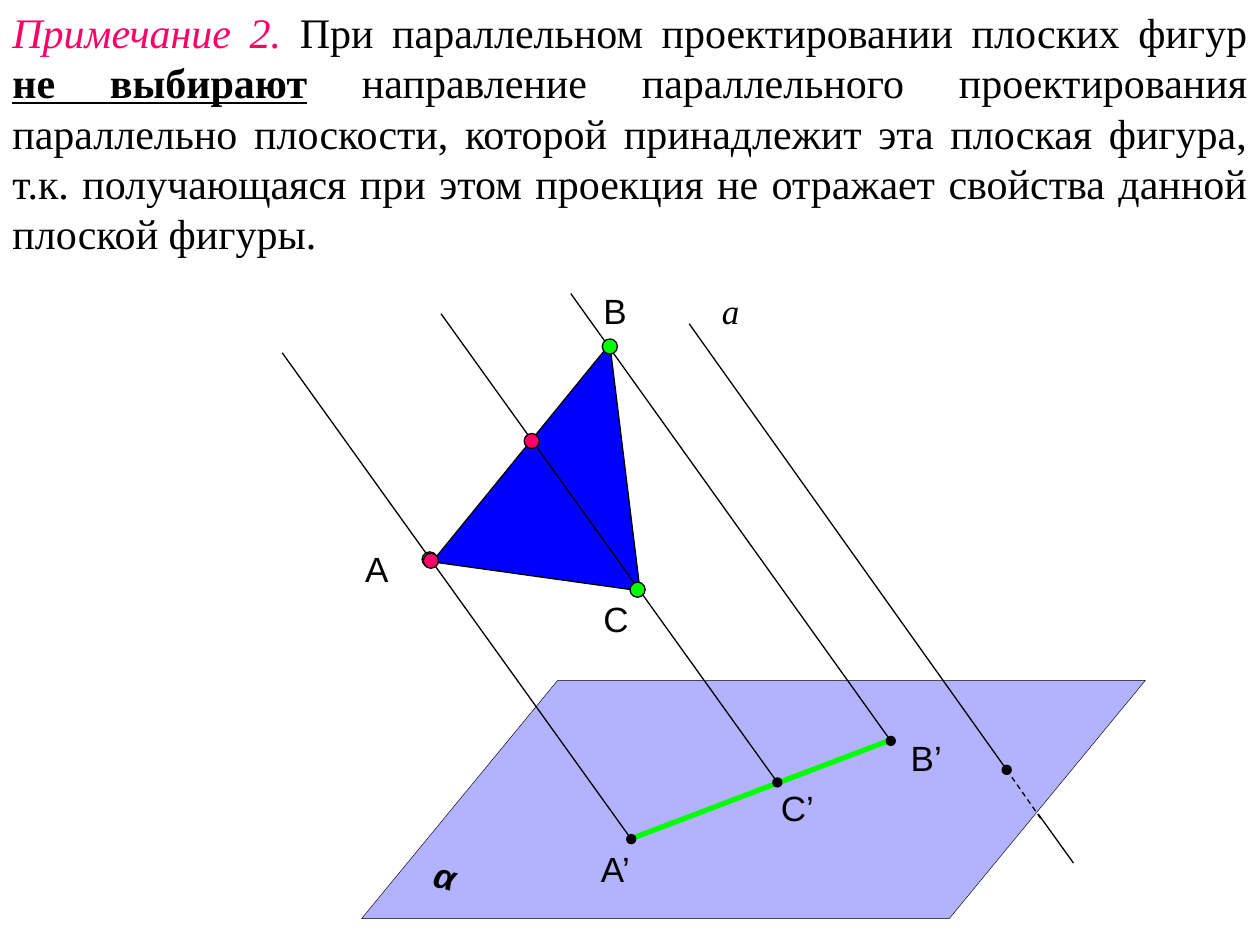
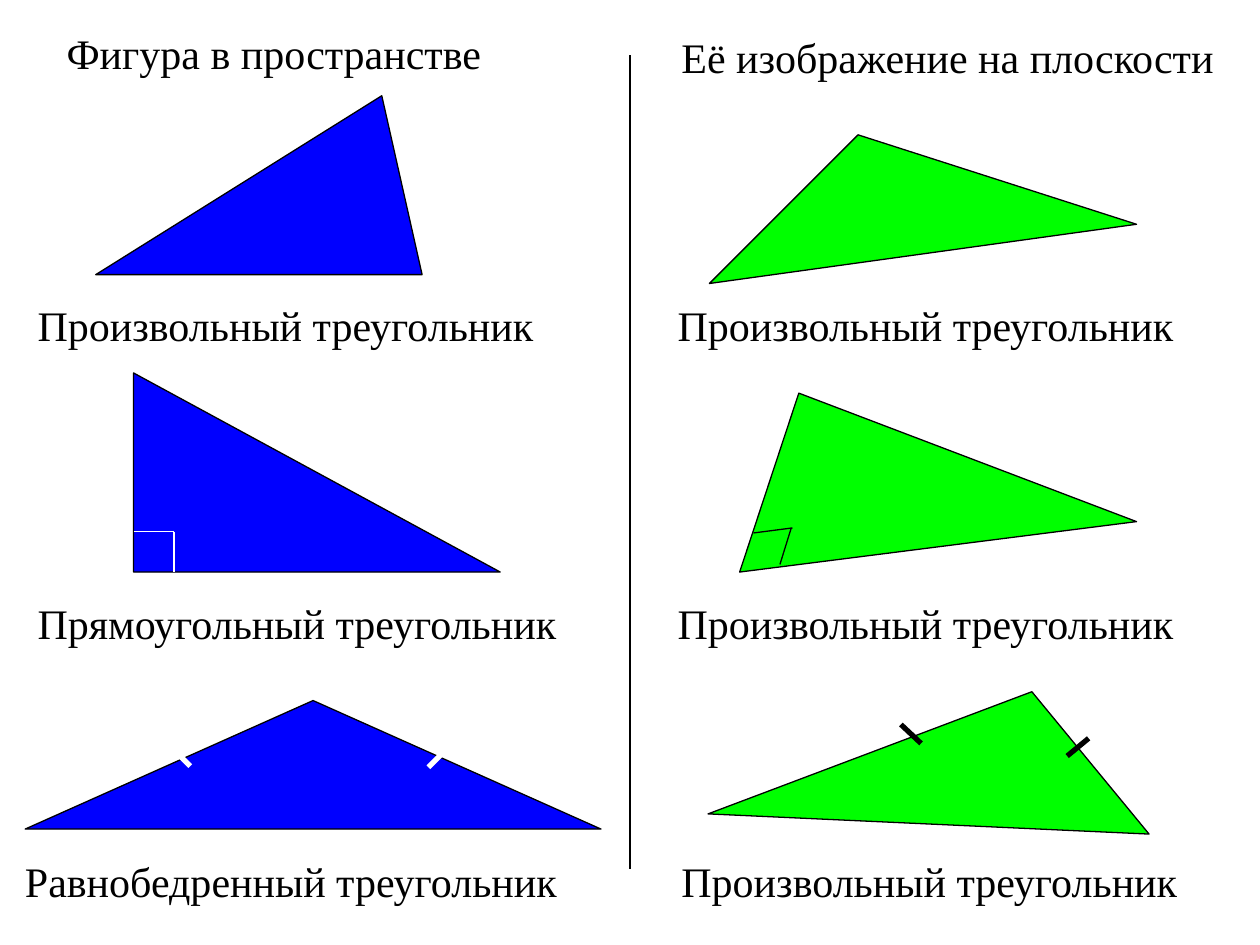
from dataclasses import dataclass
from typing import Any

from pptx import Presentation
from pptx.dml.color import RGBColor
from pptx.enum.dml import MSO_LINE
from pptx.enum.shapes import MSO_CONNECTOR, MSO_SHAPE
from pptx.enum.text import MSO_AUTO_SIZE, PP_ALIGN
from pptx.oxml.ns import qn
from pptx.util import Inches, Pt
from lxml.etree import SubElement

BLACK, WHITE = "000000", "FFFFFF"
BLUE, GREEN, PINK = "0000FF", "00FF00", "FF0066"
SERIF, SANS = "Times New Roman", "Arial"
THIN, THICK = 0.75, 3
DOT = 0.12


def rgb(value):
    """Turn a hex string into a colour."""
    return RGBColor.from_string(value)


def add_run(p, text, size=24, font=SERIF, color=BLACK, bold=False, italic=False, underline=False):
    """Append one formatted run to a paragraph."""
    r = p.add_run()
    r.text = text
    r.font.size, r.font.name = Pt(size), font
    r.font.bold, r.font.italic, r.font.underline = bold, italic, underline
    r.font.color.rgb = rgb(color)


@dataclass
class Region:
    """A part of a slide whose contents are placed from its top left corner."""

    s: Any
    x: float
    y: float

    def point(self, x, y):
        """Convert a local point to slide lengths."""
        return Inches(self.x + x), Inches(self.y + y)

    def paint(self, sp, fill, weight=THIN, alpha=None):
        """Give a shape its fill and black outline."""
        sp.shadow.inherit = False
        sp.fill.solid()
        sp.fill.fore_color.rgb = rgb(fill)
        sp.line.color.rgb = rgb(BLACK)
        sp.line.width = Pt(weight)
        if alpha:
            color = sp.fill._xPr.find(qn("a:solidFill"))[0]
            SubElement(color, qn("a:alpha")).set("val", str(alpha * 1000))

    def preset(self, kind, x, y, w, h, fill, adj=None, **style):
        """Draw a preset shape."""
        sp = self.s.shapes.add_shape(kind, *self.point(x, y), Inches(w), Inches(h))
        if adj is not None:
            sp.adjustments[0] = adj
        self.paint(sp, fill, **style)

    def polygon(self, points, fill):
        """Draw a closed outline through the points."""
        start, *rest = [self.point(*xy) for xy in points]
        builder = self.s.shapes.build_freeform(*start)
        builder.add_line_segments(rest, close=True)
        self.paint(builder.convert_to_shape(), fill)

    def line(self, start, end, color=BLACK, weight=THIN, dash=None, oval=False):
        """Draw a straight line, optionally ending in a round dot."""
        c = self.s.shapes.add_connector(MSO_CONNECTOR.STRAIGHT, *self.point(*start), *self.point(*end))
        c.line.color.rgb = rgb(color)
        c.line.width = Pt(weight)
        if dash:
            c.line.dash_style = dash
        if oval:
            SubElement(c.line._get_or_add_ln(), qn("a:tailEnd")).set("type", "oval")
        SubElement(c._element.spPr, qn("a:effectLst"))

    def text(self, runs, x, y, w, h, align=PP_ALIGN.LEFT, rotation=0):
        """Write one paragraph made of (text, format) runs."""
        sp = self.s.shapes.add_textbox(*self.point(x, y), Inches(w), Inches(h))
        sp.rotation = rotation
        tf = sp.text_frame
        tf.word_wrap = True
        tf.auto_size = MSO_AUTO_SIZE.SHAPE_TO_FIT_TEXT
        p = tf.paragraphs[0]
        p.alignment = align
        before = SubElement(p._p.get_or_add_pPr(), qn("a:spcBef"))
        SubElement(before, qn("a:spcPct")).set("val", "50000")
        for text, style in runs:
            add_run(p, text, **style)


def add_note(s, x, y, w, h):
    """Write the justified remark."""
    runs = [
        ("Примечание 2.", dict(color=PINK, italic=True)),
        (" При параллельном проектировании плоских фигур ", {}),
        ("не выбирают", dict(bold=True, underline=True)),
        (" направление параллельного проектирования параллельно плоскости, которой принадлежит "
         "эта плоская фигура, т.к. получающаяся при этом проекция не отражает свойства данной "
         "плоской фигуры.", {}),
    ]
    Region(s, x, y).text(runs, 0, 0, w, h, align=PP_ALIGN.JUSTIFY)


def add_projection(s, x, y):
    """Draw a triangle projected along line a to a segment of plane α."""
    box = Region(s, x, y)
    box.preset(MSO_SHAPE.PARALLELOGRAM, 0.67, 3.2, 6.22, 1.89, BLUE, adj=0.823, weight=0.25, alpha=30)
    box.line((2.8, 4.46), (4.85, 3.68), GREEN, THICK)
    box.line((2.33, 0.13), (4.87, 3.68), oval=True)
    box.polygon([(1.23, 2.26), (2.64, 0.53), (2.88, 2.49)], BLUE)
    rays = [((0.04, 0.6), (2.81, 4.46)), ((3.27, 0.37), (5.79, 3.91)), ((1.3, 0.29), (3.97, 4.01))]
    for start, end in rays:
        box.line(start, end, oval=True)
    box.line((5.79, 3.91), (6.07, 4.31), dash=MSO_LINE.DASH)
    box.line((6.04, 4.26), (6.32, 4.65))

    dots = [(1.15, 2.18, GREEN), (1.16, 2.19, PINK), (2.8, 2.42, GREEN), (2.58, 0.49, GREEN), (1.96, 1.24, PINK)]
    for left, top, color in dots:
        box.preset(MSO_SHAPE.OVAL, left, top, DOT, DOT, color)

    labels = [("А", 0.6, 2.1), ("B", 2.49, 0.05), ("C", 2.49, 2.49),
              ("А’", 2.47, 4.48), ("B’", 4.93, 3.6), ("C’", 3.9, 3.99)]
    for name, left, top in labels:
        box.text([(name, dict(size=20, font=SANS))], left, top, 0.47, 0.43)
    box.text([("а", dict(size=20, italic=True))], 3.43, 0.05, 0.32, 0.43)
    box.text([("α", dict(size=20, font=SANS, bold=True, italic=True))], 1.15, 4.54, 0.41, 0.43, rotation=13.8)


def add_figure(s, x, y, outline, fill, marks, mark_color, mark_weight, caption, caption_at):
    """Draw one triangle with its marks and its caption."""
    box = Region(s, x, y)
    if isinstance(outline, list):
        box.polygon(outline, fill)
    else:
        box.preset(*outline, fill)
    for start, end in marks:
        box.line(start, end, mark_color, mark_weight)
    box.text([(caption, {})], *caption_at, 4.6, 0.51)


def add_comparison(s, x, y):
    """Set figures in space beside their images on the plane."""
    box = Region(s, x, y)
    box.line((5, 0.44), (5, 6.9))
    box.text([("Фигура в пространстве", {})], 0.43, 0.17, 3.94, 0.5)
    box.text([("Её изображение на плоскости", {})], 5.31, 0.2, 4.49, 0.51)
    arbitrary = "Произвольный треугольник"
    rows = [
        (0.7, THIN, 1.63, (0.2, 0.28), (
            ([(0.76, 1.48), (3.03, 0.06), (3.35, 1.48)], [], arbitrary),
            ([(0.63, 1.55), (1.81, 0.37), (4.02, 1.08)], [], arbitrary))),
        (2.9, THIN, 1.79, (0.2, 0.28), (
            ((MSO_SHAPE.RIGHT_TRIANGLE, 1.06, 0.06, 2.91, 1.58),
             [((1.06, 1.32), (1.38, 1.32)), ((1.38, 1.32), (1.38, 1.64))], "Прямоугольный треугольник"),
            ([(0.87, 1.64), (1.34, 0.22), (4.02, 1.24)],
             [((0.98, 1.33), (1.29, 1.29)), ((1.28, 1.29), (1.19, 1.58))], arbitrary))),
        (5.4, THICK, 1.34, (0.1, 0.31), (
            ((MSO_SHAPE.ISOSCELES_TRIANGLE, 0.2, 0.16, 4.57, 1.02),
             [((1.35, 0.52), (1.51, 0.68)), ((3.4, 0.69), (3.56, 0.53))], "Равнобедренный треугольник"),
            ([(0.62, 1.06), (3.19, 0.09), (4.12, 1.22)],
             [((2.15, 0.35), (2.31, 0.5)), ((3.64, 0.46), (3.47, 0.6))], arbitrary))),
    ]
    columns = [(0, BLUE, WHITE), (5, GREEN, BLACK)]
    for top, weight, caption_top, caption_lefts, figures in rows:
        for (left, fill, mark), caption_left, (outline, marks, caption) in zip(columns, caption_lefts, figures):
            add_figure(s, x + left, y + top, outline, fill, marks, mark, weight,
                       caption, (caption_left, caption_top))


def main():
    """Build both slides and save them."""
    prs = Presentation()
    prs.slide_width, prs.slide_height = Inches(10), Inches(7.5)
    blank = prs.slide_layouts[6]
    s = prs.slides.add_slide(blank)
    add_note(s, 0, 0, 10, 2.12)
    add_projection(s, 2.2, 2.2)
    add_comparison(prs.slides.add_slide(blank), 0, 0)
    prs.save("out.pptx")


if __name__ == "__main__":
    main()
